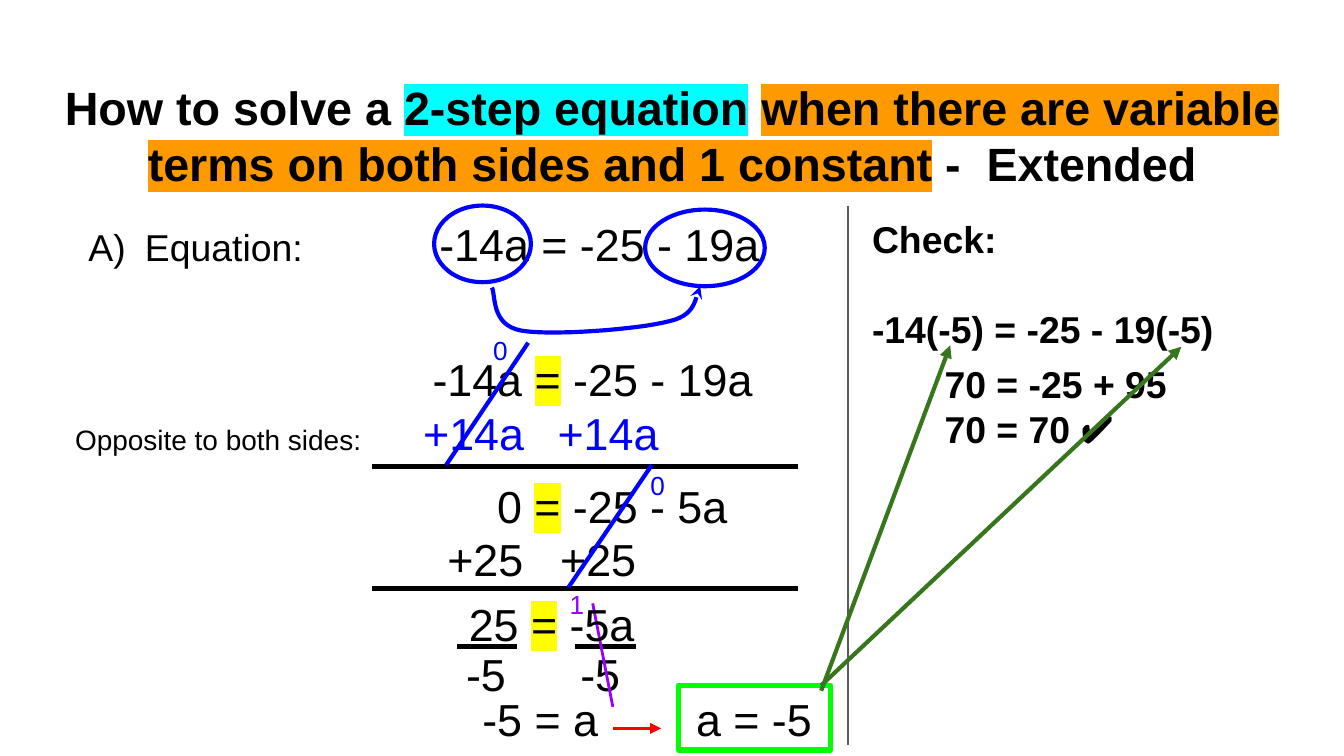
from dataclasses import dataclass

from lxml import etree
from pptx import Presentation
from pptx.dml.color import RGBColor
from pptx.enum.shapes import MSO_CONNECTOR, MSO_SHAPE
from pptx.enum.text import PP_ALIGN
from pptx.oxml.ns import qn
from pptx.util import Inches, Pt

STRAIGHT = MSO_CONNECTOR.STRAIGHT
OVAL, RECTANGLE = MSO_SHAPE.OVAL, MSO_SHAPE.RECTANGLE
LEFT, CENTER = PP_ALIGN.LEFT, PP_ALIGN.CENTER
COLORS = {
    "black": "000000", "blue": "0000FF", "cyan": "00FFFF", "orange": "FF9900",
    "yellow": "FFFF00", "lime": "00FF00", "gray": "595959", "green": "38761D",
    "purple": "9900FF", "red": "FF0000",
}
FONT_NAME = "Arial"
CURVE_STEPS = 16


@dataclass
class Span:
    text: str
    size: float = 24
    color: str = "black"
    bold: bool = False
    highlight: str = ""


@dataclass
class Para:
    spans: list[Span]
    margin: float = 0
    indent: float = 0
    tabs: tuple[float, ...] = ()
    before: float = 0
    align: int = LEFT
    numbered: bool = False


@dataclass
class Label:
    left: float
    top: float
    width: float
    height: float
    paras: list[Para]


@dataclass
class Stroke:
    start: tuple[float, float]
    end: tuple[float, float]
    color: str
    width: float
    arrow: bool = False


@dataclass
class Outline:
    kind: int
    left: float
    top: float
    width: float
    height: float
    color: str
    weight: float


@dataclass
class Curve:
    points: list[tuple[float, float]]
    color: str
    width: float


def rgb(name: str) -> RGBColor:
    return RGBColor.from_string(COLORS[name])


def set_values(target, values: dict) -> None:
    for name, value in values.items():
        setattr(target, name, value)


def style_line(line, color: str, width: float) -> None:
    line.color.rgb = rgb(color)
    line.width = Pt(width)


def add_arrowhead(shape, tag: str, kind: str) -> None:
    etree.SubElement(shape.line._get_or_add_ln(), qn(tag), type=kind)


def add_span(paragraph, span: Span) -> None:
    run = paragraph.add_run()
    run.text = span.text
    set_values(run.font, {"name": FONT_NAME, "size": Pt(span.size), "bold": span.bold})
    run.font.color.rgb = rgb(span.color)
    if span.highlight:
        mark = etree.Element(qn("a:highlight"))
        etree.SubElement(mark, qn("a:srgbClr"), val=COLORS[span.highlight])
        run.font._element.find(qn("a:solidFill")).addnext(mark)


def format_para(paragraph, para: Para) -> None:
    set_values(paragraph, {"alignment": para.align, "line_spacing": 1.0,
                           "space_before": Pt(para.before)})
    properties = paragraph._p.get_or_add_pPr()
    properties.set("marL", str(Inches(para.margin)))
    properties.set("indent", str(Inches(para.indent)))
    if para.numbered:
        etree.SubElement(properties, qn("a:buFont"), typeface=FONT_NAME)
        etree.SubElement(properties, qn("a:buAutoNum"), type="alphaUcParenR")
    if para.tabs:
        stops = etree.SubElement(properties, qn("a:tabLst"))
        for stop in para.tabs:
            etree.SubElement(stops, qn("a:tab"), pos=str(Inches(stop)), algn="l")


def draw_label(page, label: Label) -> None:
    box = page.shapes.add_textbox(Inches(label.left), Inches(label.top),
                                  Inches(label.width), Inches(label.height))
    frame = box.text_frame
    sides = ("left", "top", "right", "bottom")
    set_values(frame, {"word_wrap": True} | {f"margin_{side}": Inches(0.1) for side in sides})
    for index, para in enumerate(label.paras):
        paragraph = frame.add_paragraph() if index else frame.paragraphs[0]
        format_para(paragraph, para)
        for span in para.spans:
            add_span(paragraph, span)


def draw_stroke(page, stroke: Stroke) -> None:
    connector = page.shapes.add_connector(
        STRAIGHT, *(Inches(value) for value in stroke.start + stroke.end))
    style_line(connector.line, stroke.color, stroke.width)
    etree.SubElement(connector._element.spPr, qn("a:effectLst"))
    if stroke.arrow:
        add_arrowhead(connector, "a:tailEnd", "triangle")


def draw_outline(page, outline: Outline) -> None:
    shape = page.shapes.add_shape(outline.kind, Inches(outline.left), Inches(outline.top),
                                  Inches(outline.width), Inches(outline.height))
    shape.shadow.inherit = False
    shape.fill.background()
    style_line(shape.line, outline.color, outline.weight)


def bezier_point(controls: list, t: float) -> tuple[int, int]:
    weights = ((1 - t) ** 3, 3 * t * (1 - t) ** 2, 3 * t ** 2 * (1 - t), t ** 3)
    x, y = (sum(weight * point[axis] for weight, point in zip(weights, controls))
            for axis in (0, 1))
    return Inches(x), Inches(y)


def draw_curve(page, curve: Curve) -> None:
    vertices = [bezier_point(curve.points[first:first + 4], step / CURVE_STEPS)
                for first in range(0, len(curve.points) - 1, 3)
                for step in range(1, CURVE_STEPS + 1)]
    start_x, start_y = curve.points[0]
    builder = page.shapes.build_freeform(Inches(start_x), Inches(start_y))
    builder.add_line_segments(vertices, close=False)
    shape = builder.convert_to_shape()
    shape.shadow.inherit = False
    shape.fill.background()
    style_line(shape.line, curve.color, curve.width)
    add_arrowhead(shape, "a:headEnd", "stealth")


def equation(left: str, right: str) -> list[Span]:
    return [Span(f"{left} "), Span("=", highlight="yellow"), Span(f" {right}")]


def columns(spans: list[Span], *stops: float) -> Para:
    return Para(spans, stops[0], -stops[0], stops)


def bold(text: str, size: float = 20, highlight: str = "") -> Span:
    return Span(text, size, bold=True, highlight=highlight)


def small(left: float, top: float, width: float, height: float, text: str, color: str) -> Label:
    return Label(left, top, width, height, [Para([Span(text, 14, color)])])


TITLE = [bold("How to solve a ", 25), bold("2-step equation", 25, "cyan"), bold(" ", 25),
         bold("when there are variable terms on both sides and 1 constant", 25, "orange"),
         bold(" -  Extended", 25)]
ITEMS = [
    Label(4.99, 5.05, 1.32, 0.57, [Para([Span("a = -5")], margin=0.09)]),
    Label(0.34, 0.49, 9.32, 1.15, [Para(TITLE, align=CENTER)]),
    Label(0.48, 1.51, 9.18, 0.62, [Para([Span("Equation:", 20), Span("\t-14a = -25 - 19a")],
                                        0.5, -0.42, (2.69,), numbered=True)]),
    Outline(OVAL, 3.23, 1.53, 0.72, 0.57, "blue", 2.25),
    Outline(OVAL, 4.8, 1.56, 0.89, 0.57, "blue", 2.25),
    Outline(RECTANGLE, 5.05, 5.1, 1.13, 0.48, "lime", 3),
    Curve([(5.21, 2.13), (5.17, 2.17), (5.21, 2.34), (4.98, 2.39), (4.76, 2.45),
           (4.1, 2.5), (3.88, 2.46), (3.65, 2.42), (3.69, 2.19), (3.66, 2.14)], "blue", 2.25),
    Label(0.46, 2.52, 9.18, 0.9, [
        Para(equation("-14a", "-25 - 19a"), margin=2.66),
        columns([Span("Opposite to both sides:", 15), Span("\t+14a\t+14a", color="blue")],
                2.59, 5.27)]),
    Stroke((2.77, 3.47), (5.94, 3.47), "black", 3),
    Stroke((3.32, 3.46), (3.93, 2.55), "blue", 2.25),
    small(3.57, 2.39, 0.29, 0.24, "0", "blue"),
    Stroke((6.31, 1.53), (6.31, 5.54), "gray", 1.5),
    Label(6.39, 1.51, 3.53, 1.24, [Para([bold("Check:")]),
                                   Para([bold("-14(-5) = -25 - 19(-5)")], before=24)]),
    Label(6.47, 2.59, 3.53, 1.24, [Para([bold("70 = -25 + 95")], margin=0.46),
                                   Para([bold("70 = 70 "), Span("✔", 20)], margin=0.46)]),
    Stroke((6.11, 5.14), (7.07, 2.57), "green", 2.25, True),
    Stroke((6.11, 5.1), (8.79, 2.58), "green", 2.25, True),
    Label(3.23, 3.46, 2.37, 0.9, [Para(equation("0", "-25 - 5a"), margin=0.37),
                                  columns([Span("+25\t+25")], 0.84)]),
    Label(3.37, 4.71, 1.53, 0.57, [columns([Span("-5\t-5")], 0.85)]),
    *(Stroke((left, 4.81), (left + 0.45, 4.81), "black", 2.25) for left in (3.4, 4.28)),
    Stroke((4.41, 4.49), (4.56, 5.26), "purple", 1.5),
    small(4.14, 4.28, 0.32, 0.34, "1", "purple"),
    Stroke((2.77, 4.38), (5.94, 4.38), "black", 3),
    Stroke((4.23, 4.37), (4.85, 3.46), "blue", 2.25),
    small(4.74, 3.39, 0.29, 0.24, "0", "blue"),
    Label(3.39, 4.34, 1.56, 0.34, [Para(equation("25", "-5a"))]),
    Label(3.49, 5.05, 1.32, 0.57, [Para([Span("-5 = a")])]),
    Stroke((4.56, 5.42), (4.92, 5.42), "red", 1.5, True),
]
DRAWERS = {Label: draw_label, Stroke: draw_stroke, Outline: draw_outline, Curve: draw_curve}


def main() -> None:
    deck = Presentation()
    set_values(deck, {"slide_width": Inches(10), "slide_height": Inches(10) * 9 // 16})
    page = deck.slides.add_slide(deck.slide_layouts[6])
    for item in ITEMS:
        DRAWERS[type(item)](page, item)
    deck.save("out.pptx")


if __name__ == "__main__":
    main()
